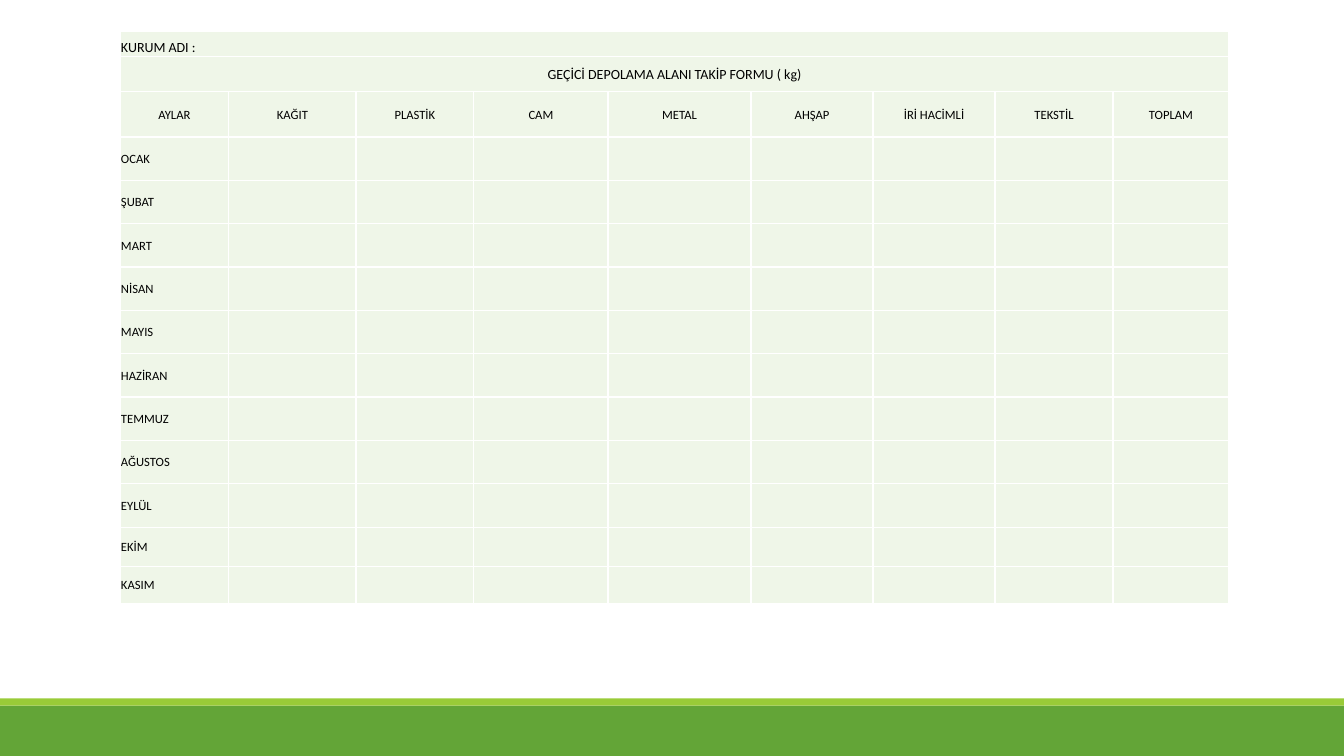
"""Build the monthly tracking form slide for a temporary waste storage area."""
from lxml.etree import SubElement
from pptx import Presentation
from pptx.dml.color import RGBColor
from pptx.enum.shapes import MSO_SHAPE
from pptx.enum.text import MSO_ANCHOR as ANCHOR, PP_ALIGN as ALIGN
from pptx.oxml.ns import qn
from pptx.util import Inches, Pt


def color(value):
    return RGBColor.from_string(value)


def write(cell, text, size=9, align=ALIGN.LEFT, anchor=ANCHOR.MIDDLE):
    cell.vertical_anchor = anchor
    p = cell.text_frame.paragraphs[0]
    p.alignment = align
    r = p.add_run()
    r.text = text
    r.font.name = "Calibri"
    r.font.size = Pt(size)
    r.font.color.rgb = color("000000")


prs = Presentation()
prs.slide_width, prs.slide_height = Inches(13.33), Inches(7.5)
s = prs.slides.add_slide(prs.slide_layouts[6])

for top, height, fill in [(7, 0.5, "63A537"), (6.93, 0.07, "99CB38")]:
    sp = s.shapes.add_shape(MSO_SHAPE.RECTANGLE, 0, Inches(top), prs.slide_width, Inches(height))
    sp.shadow.inherit = False
    sp.fill.solid()
    sp.fill.fore_color.rgb = color(fill)
    sp.line.fill.background()

headings = ["AYLAR", "KAĞIT", "PLASTİK", "CAM", "METAL", "AHŞAP", "İRİ HACİMLİ", "TEKSTİL", "TOPLAM"]
months = ["OCAK", "ŞUBAT", "MART", "NİSAN", "MAYIS", "HAZİRAN", "TEMMUZ", "AĞUSTOS", "EYLÜL", "EKİM", "KASIM"]
widths = [1.08, 1.26, 1.17, 1.33, 1.42, 1.21, 1.21, 1.17, 1.15]
heights = [0.25, 0.35, 0.45] + [0.43] * 9 + [0.39, 0.37]

table = s.shapes.add_table(len(heights), len(widths), Inches(1.19), Inches(0.31),
                           Inches(sum(widths)), Inches(sum(heights))).table
table.first_row = table.horz_banding = False
for column, width in zip(table.columns, widths):
    column.width = Inches(width)
for row, height in zip(table.rows, heights):
    row.height = Inches(height)

for cell in table.iter_cells():
    cell.margin_left = cell.margin_right = cell.margin_top = Inches(0.01)
    cell.margin_bottom = 0
    tcPr = cell._tc.get_or_add_tcPr()
    for side in ("lnL", "lnR", "lnT", "lnB"):
        ln = SubElement(tcPr, qn(f"a:{side}"), w=str(Pt(1)))
        SubElement(SubElement(ln, qn("a:solidFill")), qn("a:srgbClr"), val="FFFFFF")
    cell.fill.solid()
    cell.fill.fore_color.rgb = color("EFF6E8")

for row in range(2):
    table.cell(row, 0).merge(table.cell(row, len(widths) - 1))
write(table.cell(0, 0), "KURUM ADI :", size=10, anchor=ANCHOR.BOTTOM)
write(table.cell(1, 0), "GEÇİCİ DEPOLAMA ALANI TAKİP FORMU ( kg)", size=10, align=ALIGN.CENTER)
for col, heading in enumerate(headings):
    write(table.cell(2, col), heading, align=ALIGN.CENTER)
for row, month in enumerate(months, start=3):
    write(table.cell(row, 0), month)

prs.save("out.pptx")
